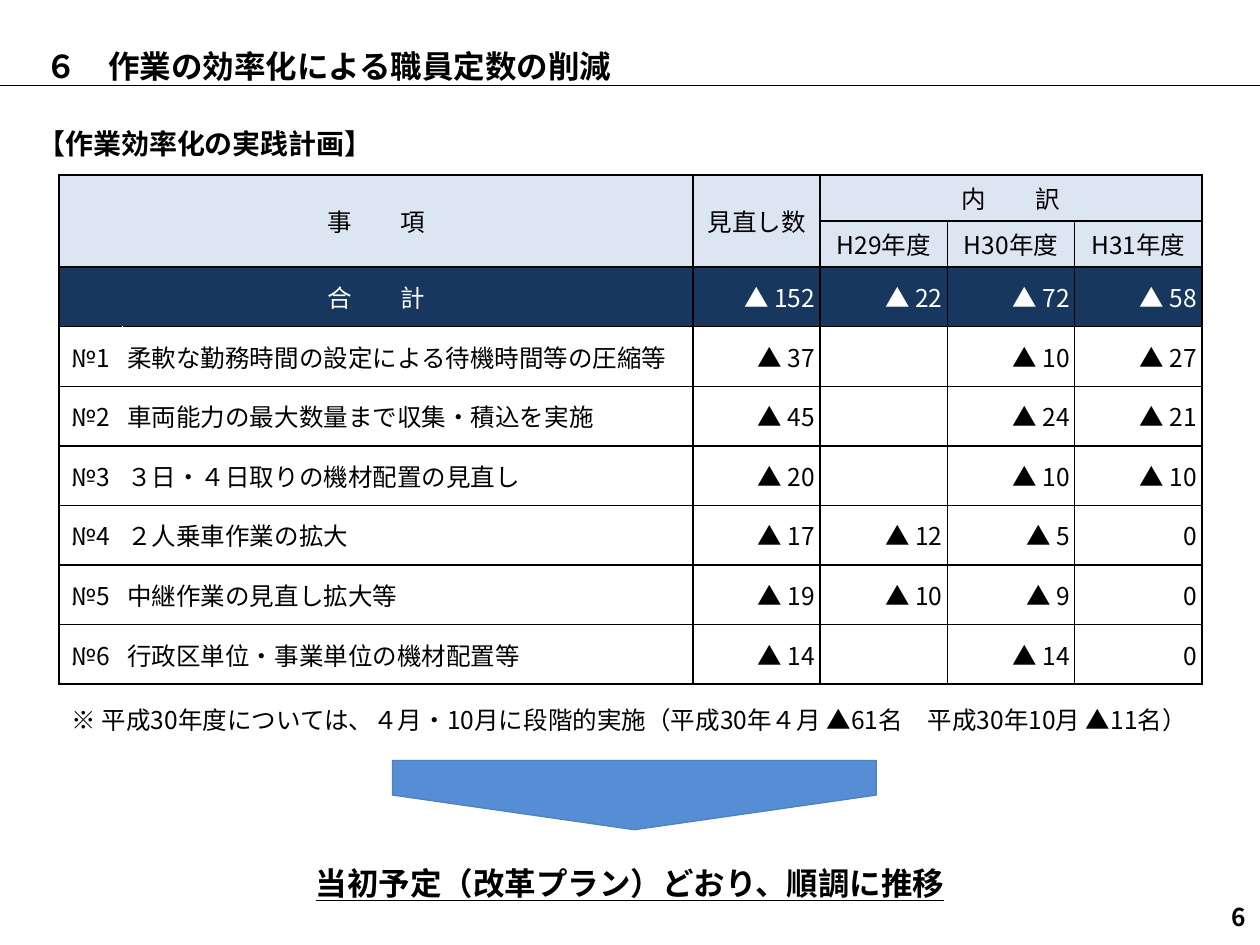
"""Build the slide on staff cuts through more efficient work."""
from lxml import etree
from pptx import Presentation
from pptx.dml.color import RGBColor
from pptx.enum.shapes import MSO_CONNECTOR, MSO_SHAPE
from pptx.enum.text import MSO_ANCHOR, PP_ALIGN
from pptx.oxml import parse_xml
from pptx.oxml.ns import nsdecls, qn
from pptx.util import Inches, Pt

FONT = "Noto Sans CJK JP"
LEFT, MID, RIGHT = PP_ALIGN.LEFT, PP_ALIGN.CENTER, PP_ALIGN.RIGHT


def color(code):
    """Turn a hex string into a colour."""
    return RGBColor.from_string(code)


def write(frame, text, size, align=LEFT, bold=False, ink="000000"):
    """Put one styled line of text in a frame."""
    frame.text = text
    para = frame.paragraphs[0]
    para.alignment = align
    for run in para.runs:
        run.font.size = Pt(size)
        run.font.bold = bold
        run.font.name = FONT
        run.font.color.rgb = color(ink)
        east = etree.SubElement(run.font._element, qn("a:ea"))
        east.set("typeface", FONT)


deck = Presentation()
deck.slide_width, deck.slide_height = Inches(10), Inches(7.5)
slide = deck.slides.add_slide(deck.slide_layouts[6])
shapes = slide.shapes

rule = shapes.add_connector(
    MSO_CONNECTOR.STRAIGHT, Inches(0), Inches(0.68), Inches(10), Inches(0.68))
rule.line.color.rgb = color("000000")
rule.line.width = Pt(0.75)
etree.SubElement(rule._element.spPr, qn("a:effectLst"))

texts = [
    ("\u3000６\u3000作業の効率化による職員定数の削減".replace("\u3000", "　"),
     0.01, -0.01, 9.99, 0.69, 18, LEFT, True),
    ("6", 9.48, 7.08, 0.51, 0.39, 14, RIGHT, True),
    ("【作業効率化の実践計画】", 0.2, 0.92, 9.39, 0.37, 16, LEFT, True),
    ("※ 平成30年度については、４月・10月に段階的実施（平成30年４月 ▲61名　平成30年10月 ▲11名）",
     0.47, 5.51, 9.06, 0.37, 14, LEFT, False),
    ("当初予定（改革プラン）どおり、順調に推移",
     1.85, 6.74, 6.3, 0.47, 18, MID, True),
]
frames = []
for text, x, y, w, h, size, align, bold in texts:
    box = shapes.add_textbox(Inches(x), Inches(y), Inches(w), Inches(h))
    frame = box.text_frame
    frame.word_wrap = True
    frame.vertical_anchor = MSO_ANCHOR.MIDDLE
    frame.margin_top, frame.margin_bottom = Inches(0.12), Inches(0.05)
    write(frame, text, size, align, bold)
    frames.append(frame)
title, page, head, note, close = frames
title.vertical_anchor = MSO_ANCHOR.BOTTOM
title.margin_bottom = Inches(0.01)
page.margin_top = Inches(0.05)
note.paragraphs[0].line_spacing = 0.85
close.paragraphs[0].runs[0].font.underline = True

rows = [
    ["事　　項", "", "見直し数", "内　　訳", "", ""],
    ["", "", "", "H29年度", "H30年度", "H31年度"],
    ["合　　計", "", "▲ 152", "▲ 22", "▲ 72", "▲ 58"],
    ["№1", "柔軟な勤務時間の設定による待機時間等の圧縮等", "▲ 37", "", "▲ 10", "▲ 27"],
    ["№2", "車両能力の最大数量まで収集・積込を実施", "▲ 45", "", "▲ 24", "▲ 21"],
    ["№3", "３日・４日取りの機材配置の見直し", "▲ 20", "", "▲ 10", "▲ 10"],
    ["№4", "２人乗車作業の拡大", "▲ 17", "▲ 12", "▲ 5", "0"],
    ["№5", "中継作業の見直し拡大等", "▲ 19", "▲ 10", "▲ 9", "0"],
    ["№6", "行政区単位・事業単位の機材配置等", "▲ 14", "", "▲ 14", "0"],
]
table = shapes.add_table(
    len(rows), 6, Inches(0.47), Inches(1.39), Inches(9.06), Inches(4.04)).table
table.first_row = table.horz_banding = False
for col, wide in zip(table.columns, [0.5, 4.53] + [1.01] * 4):
    col.width = Inches(wide)
for r, row in enumerate(rows):
    table.rows[r].height = Inches(0.365 if r < 2 else 0.473)
    for c, text in enumerate(row):
        cell = table.cell(r, c)
        cell.vertical_anchor = MSO_ANCHOR.MIDDLE
        cell.margin_left = cell.margin_right = Inches(0.04)
        cell.margin_top = cell.margin_bottom = Inches(0.04)
        align = MID if r < 2 or c == 0 else LEFT if c == 1 else RIGHT
        if text:
            write(cell.text_frame, text, 14, align,
                  ink="FFFFFF" if r == 2 else "000000")
        for side in "LRTB":
            inner = r > 2 and (c, side) in [(0, "R"), (1, "L")]
            ink, wide = ("FFFFFF", 0.75) if inner else ("000000", 1)
            cell._tc.get_or_add_tcPr().append(parse_xml(
                f'<a:ln{side} {nsdecls("a")} w="{Pt(wide)}"><a:solidFill>'
                f'<a:srgbClr val="{ink}"/></a:solidFill></a:ln{side}>'))
        if r > 2:
            cell.fill.background()
        else:
            cell.fill.solid()
            cell.fill.fore_color.rgb = color("17375E" if r == 2 else "DCE6F2")
for top, left, end, right in [(0, 0, 1, 1), (0, 2, 1, 2), (0, 3, 0, 5), (2, 0, 2, 1)]:
    table.cell(top, left).merge(table.cell(end, right))

arrow = shapes.add_shape(
    MSO_SHAPE.PENTAGON, Inches(4.76), Inches(4.39), Inches(0.55), Inches(3.84))
arrow.rotation = 90
arrow.shadow.inherit = False
arrow.fill.solid()
arrow.fill.fore_color.rgb = color("558ED5")
arrow.line.color.rgb = color("4F81BD")
arrow.line.width = Pt(0.75)

deck.save("out.pptx")
